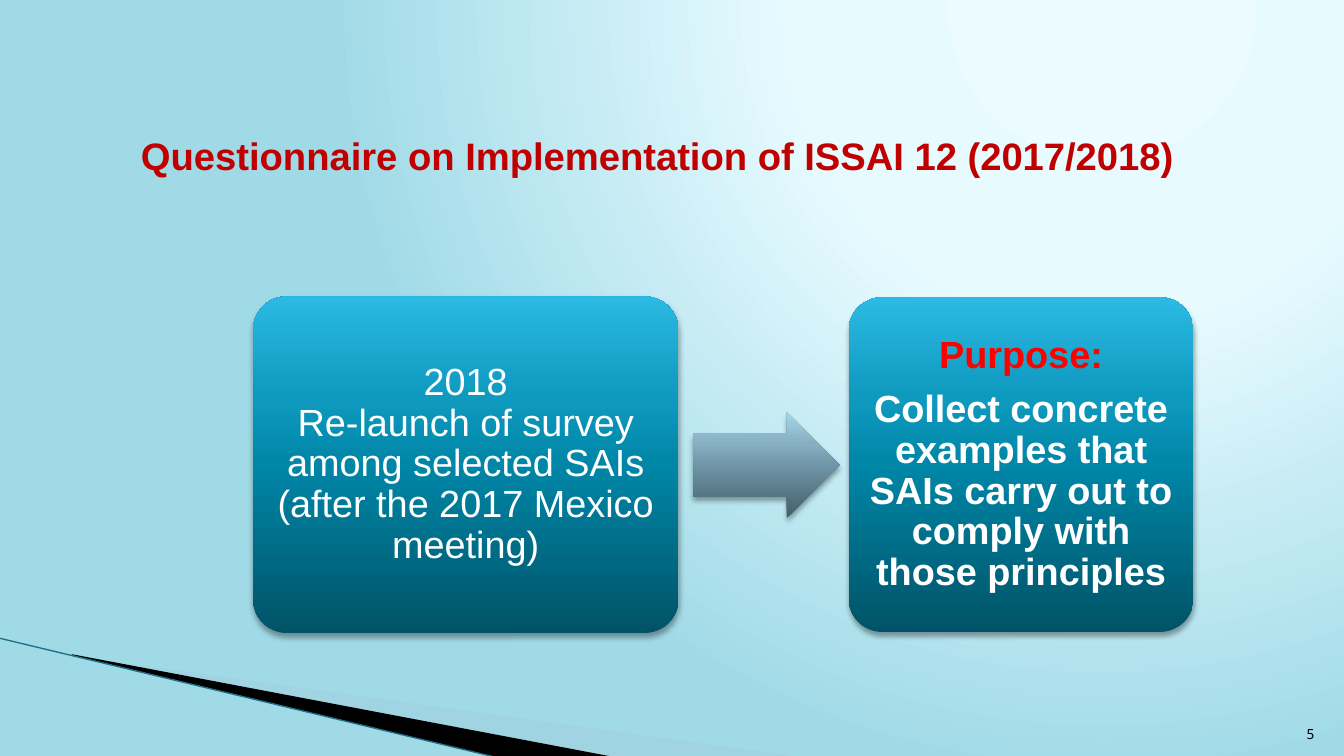
from pptx import Presentation
from pptx import util as u
from pptx.dml.color import RGBColor
from pptx.enum import shapes, text
from pptx.oxml import parse_xml
from pptx.oxml.ns import nsdecls, qn


def color(value):
    return RGBColor.from_string(value)


def assign(target, values):
    for name, value in values.items():
        setattr(target, name, value)


class SurveySlide:
    """Draws survey slide elements at places given in percent of the slide's size."""

    heading = {"name": "Arial", "size": u.Pt(27.3), "bold": True}
    plain = {"name": "Arial", "size": u.Pt(27), "bold": False}
    strong = {**plain, "bold": True}
    small = {"name": "Noto Sans Mono", "size": u.Pt(10)}
    teal = [(0, "005367"), (50, "0086A7"), (70, "0E9ABE"), (100, "2CB9E3")]
    steel = [(0, "445E68"), (50, "6F96A7"), (70, "86AFC1"), (100, "A6D5E9")]
    sky = [(0, "EBFBFF"), (40, "E7FBFF"), (100, "A1DAE7")]
    downward = '<a:lin {} ang="16200000" scaled="0"/>'
    glow = ('<a:path {} path="circle">'
            '<a:fillToRect l="65000" t="0" r="0" b="98000"/></a:path>')

    def __init__(self, presentation):
        self.width = presentation.slide_width
        self.height = presentation.slide_height
        self.slide = presentation.slides.add_slide(presentation.slide_layouts[6])

    def x(self, percent):
        return round(self.width * percent / 100)

    def y(self, percent):
        return round(self.height * percent / 100)

    def place(self, left, top, width, height):
        return self.x(left), self.y(top), self.x(width), self.y(height)

    def gradient(self, fill, element, stops, direction):
        fill.gradient()
        gradient = next(element.iter(qn("a:gradFill")))
        for child in list(gradient):
            gradient.remove(child)
        marks = "".join(
            f'<a:gs pos="{position * 1000}"><a:srgbClr val="{value}"/></a:gs>'
            for position, value in stops)
        gradient.append(parse_xml(f'<a:gsLst {nsdecls("a")}>{marks}</a:gsLst>'))
        gradient.append(parse_xml(direction.format(nsdecls("a"))))

    def background(self):
        self.gradient(self.slide.background.fill, self.slide.element, self.sky, self.glow)

    def polygon(self, points, fill, opacity=100):
        corners = [(self.x(across), self.y(down)) for across, down in points]
        builder = self.slide.shapes.build_freeform(*corners[0], scale=1.0)
        builder.add_line_segments(corners[1:], close=True)
        shape = builder.convert_to_shape()
        shape.shadow.inherit = False
        shape.fill.solid()
        shape.fill.fore_color.rgb = color(fill)
        shape.line.fill.background()
        tint = next(shape.element.spPr.iter(qn("a:srgbClr")))
        tint.append(parse_xml(f'<a:alpha {nsdecls("a")} val="{opacity * 1000}"/>'))

    def line(self, start, end, stroke, weight):
        connector = self.slide.shapes.add_connector(
            shapes.MSO_CONNECTOR.STRAIGHT,
            self.x(start[0]), self.y(start[1]), self.x(end[0]), self.y(end[1]))
        connector.line.color.rgb = color(stroke)
        connector.line.width = u.Pt(weight)
        connector._element.spPr.append(parse_xml(f'<a:effectLst {nsdecls("a")}/>'))

    def block(self, kind, place, stops, adjustments):
        shape = self.slide.shapes.add_shape(kind, *self.place(*place))
        for index, value in enumerate(adjustments):
            shape.adjustments[index] = value
        self.gradient(shape.fill, shape.element.spPr, stops, self.downward)
        shape.line.fill.background()
        shape.shadow.inherit = False
        shape.element.spPr.find(qn("a:effectLst")).append(parse_xml(
            f'<a:outerShdw {nsdecls("a")} blurRad="{u.Pt(4)}" dist="{u.Pt(3)}" '
            'dir="5400000" rotWithShape="0"><a:srgbClr val="000000">'
            '<a:alpha val="35000"/></a:srgbClr></a:outerShdw>'))
        return shape

    def card(self, place, paragraphs):
        shape = self.block(shapes.MSO_SHAPE.ROUNDED_RECTANGLE, place, self.teal, [0.1])
        margins = dict.fromkeys(
            ["margin_left", "margin_top", "margin_right", "margin_bottom"], u.Inches(0.11))
        self.set_text(shape, paragraphs, margins,
                      {"alignment": text.PP_ALIGN.CENTER, "line_spacing": 0.9})

    def label(self, place, paragraphs, frame_format, paragraph_format):
        box = self.slide.shapes.add_textbox(*self.place(*place))
        self.set_text(box, paragraphs, frame_format, paragraph_format)

    def set_text(self, shape, paragraphs, frame_format, paragraph_format):
        frame = shape.text_frame
        assign(frame, {"word_wrap": True, "vertical_anchor": text.MSO_ANCHOR.MIDDLE,
                       **frame_format})
        for index, (content, font, ink) in enumerate(paragraphs):
            paragraph = frame.add_paragraph() if index else frame.paragraphs[0]
            paragraph.text = content
            assign(paragraph, paragraph_format)
            if index:
                paragraph.space_before = u.Pt(9.5)
            for run in paragraph.runs:
                assign(run.font, font)
                run.font.color.rgb = color(ink)


def main():
    presentation = Presentation()
    presentation.slide_width = u.Inches(13.33)
    presentation.slide_height = u.Inches(7.5)
    survey = SurveySlide(presentation)

    survey.background()
    survey.polygon([(5.48, 86.8), (59.48, 100.13), (45.6, 100.13), (5.48, 86.67)],
                   "A0CBDC", opacity=40)
    survey.polygon([(5.33, 86.53), (45.68, 100.13), (37.2, 100.27), (5.4, 86.67)],
                   "000000")
    survey.line((-0.08, 84.4), (37.13, 100.27), "1F7189", 0.95)
    survey.label((94.58, 93.47, 3.98, 5.33), [("5", survey.small, "000000")],
                 {"vertical_anchor": text.MSO_ANCHOR.BOTTOM},
                 {"alignment": text.PP_ALIGN.RIGHT})

    survey.card((18.83, 39.2, 31.65, 44.53), [
        ("2018\vRe-launch of survey among selected SAIs (after the 2017 Mexico meeting)",
         survey.plain, "FFFFFF")])
    survey.block(shapes.MSO_SHAPE.RIGHT_ARROW, (51.6, 54.53, 10.88, 14),
                 survey.steel, [0.6, 0.5])
    survey.card((63.15, 39.33, 25.65, 44.27), [
        ("Purpose:", survey.strong, "FF0000"),
        ("Collect concrete examples that SAIs carry out to comply with those principles",
         survey.strong, "FFFFFF")])

    survey.label((9.75, 16.13, 85.88, 14.8), [
        ("Questionnaire on Implementation of ISSAI 12 (2017/2018)",
         survey.heading, "C00000")],
        {"margin_bottom": u.Inches(0.44)}, {"line_spacing": 0.9})

    presentation.save("out.pptx")


if __name__ == "__main__":
    main()
